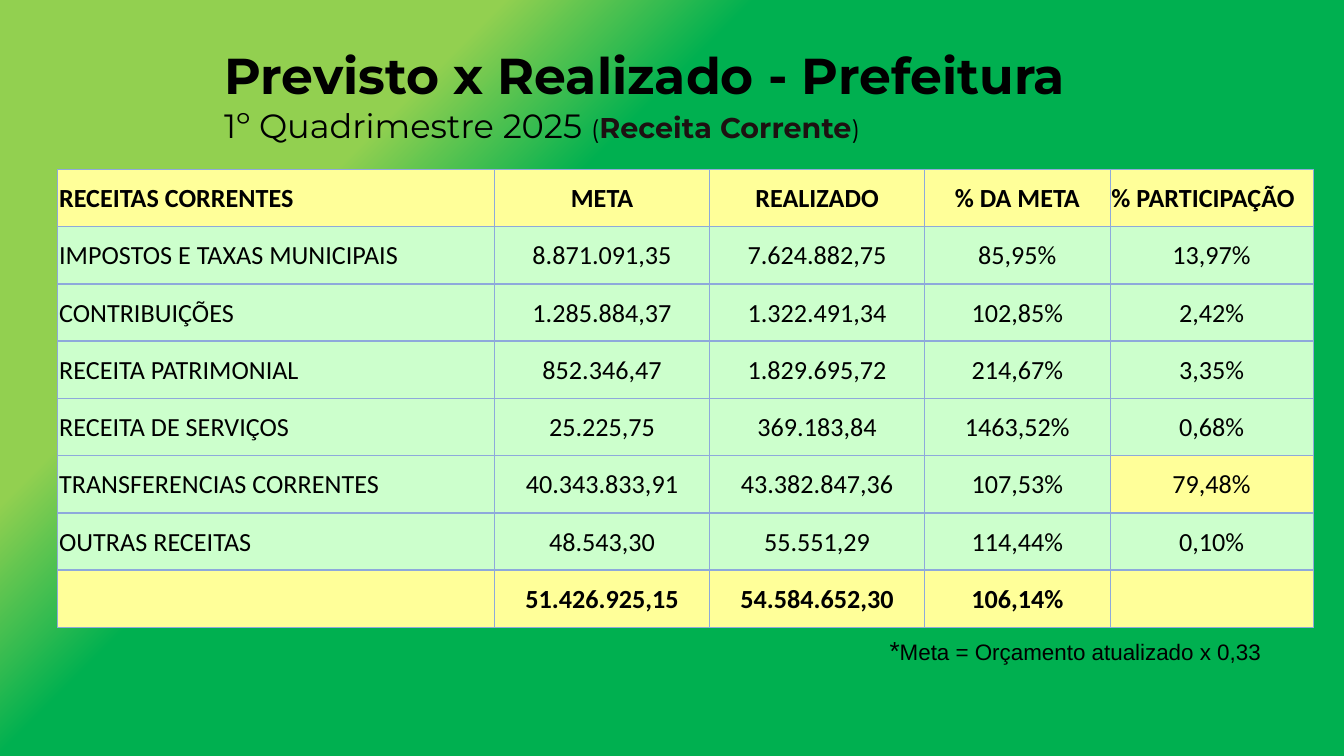
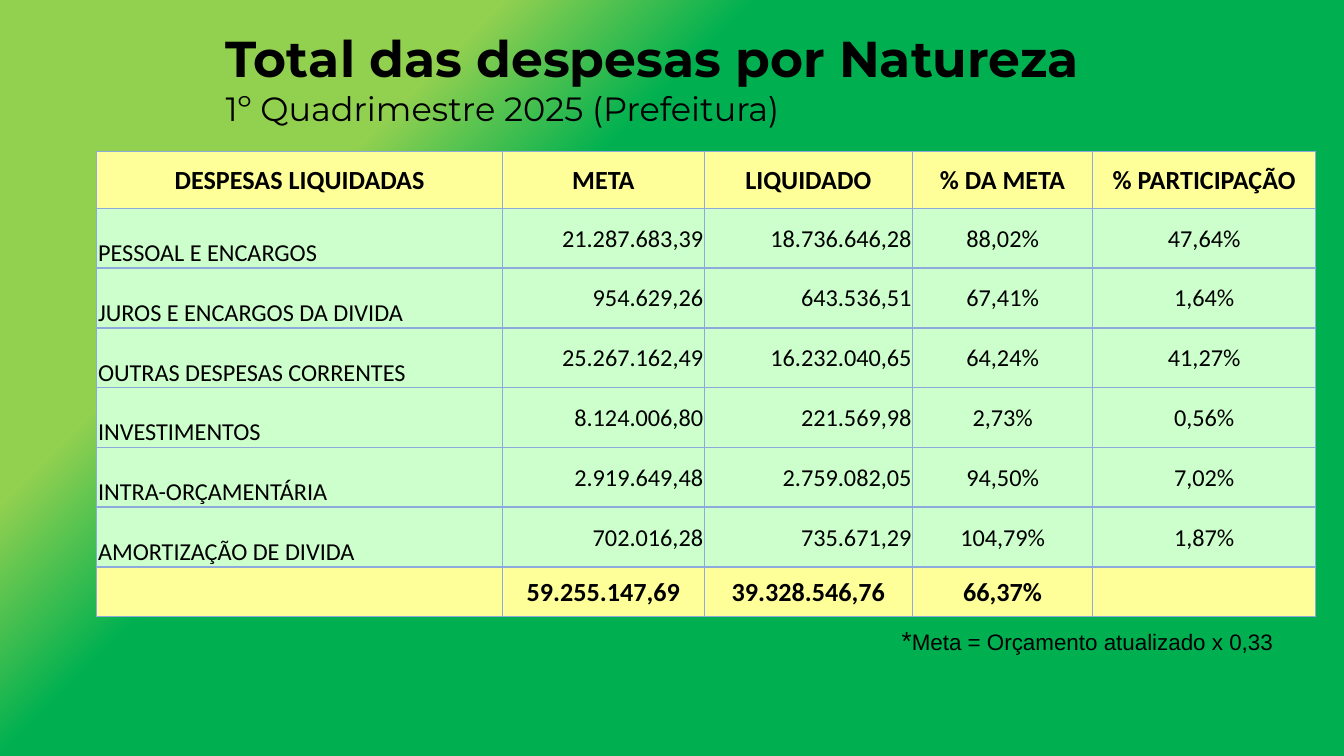
import pptx
import pptx.dml.color
import pptx.enum.text
import pptx.oxml.ns
import pptx.util
from lxml import etree

Inches, Pt = pptx.util.Inches, pptx.util.Pt
qn = pptx.oxml.ns.qn
ANCHOR = pptx.enum.text.MSO_ANCHOR
LEFT, CENTER, RIGHT = (pptx.enum.text.PP_ALIGN.LEFT, pptx.enum.text.PP_ALIGN.CENTER,
                       pptx.enum.text.PP_ALIGN.RIGHT)

# Shared style
BLACK, BROWN = "000000", "1D1111"
YELLOW, MINT, RULE = "FFFF99", "CCFFCC", "8EA9DB"
BACKGROUND = [(0, "92D050"), (24, "92D050"), (36, "00B050"), (100, "00B050")]
TITLE_FONT, TABLE_FONT, NOTE_FONT = "Montserrat", "Calibri", "Arial"
THIN, THICK = 0.5, 1

# Runs are (text, size, bold, colour); a text ending in a newline breaks the line
NOTE = [("*", 14, False, BLACK), ("Meta = Orçamento atualizado x 0,33", 12, False, BLACK)]

SLIDES = [
    {
        "heading": [[("Previsto x Realizado - Prefeitura\n", 27, True, BLACK),
                     ("1º Quadrimestre 2025 ", 18, False, BLACK), ("(", 13.5, False, BLACK),
                     ("Receita Corrente", 15.3, True, BROWN), (")", 13.5, False, BLACK)]],
        "heading_at": (1.57, 0.21, 7.78, 0.92),
        "note_at": (6.52, 4.67, 3.05, 0.34),
        "table_at": (0.43, 1.26, 9.35, 3.41),
        "columns": [3.25, 1.6, 1.6, 1.38, 1.51],
        "header_height": 3.41 / 8, "total_height": 3.41 / 8,
        "header_align": [LEFT, CENTER, CENTER, CENTER, LEFT],
        "body_align": [LEFT, CENTER, CENTER, CENTER, CENTER],
        "body_size": 14, "label_anchor": ANCHOR.MIDDLE, "header_rule": THICK,
        "highlight": (5, 4),
        "rows": [
            ("RECEITAS CORRENTES", "META", "REALIZADO", "% DA META", "% PARTICIPAÇÃO"),
            ("IMPOSTOS E TAXAS MUNICIPAIS", "8.871.091,35", "7.624.882,75", "85,95%", "13,97%"),
            ("CONTRIBUIÇÕES", "1.285.884,37", "1.322.491,34", "102,85%", "2,42%"),
            ("RECEITA PATRIMONIAL", "852.346,47", "1.829.695,72", "214,67%", "3,35%"),
            ("RECEITA DE SERVIÇOS", "25.225,75", "369.183,84", "1463,52%", "0,68%"),
            ("TRANSFERENCIAS CORRENTES", "40.343.833,91", "43.382.847,36", "107,53%", "79,48%"),
            ("OUTRAS RECEITAS", "48.543,30", "55.551,29", "114,44%", "0,10%"),
            ("", "51.426.925,15", "54.584.652,30", "106,14%", ""),
        ],
    },
    {
        "heading": [[("Total das despesas por Natureza", 27, True, BLACK)],
                    [("1º Quadrimestre 2025 (Prefeitura)", 18, False, BLACK)]],
        "heading_at": (1.58, 0.19, 8.08, 0.81),
        "note_at": (6.61, 4.6, 3.05, 0.34),
        "table_at": (0.72, 1.13, 9.07, 3.46),
        "columns": [3.02, 1.5, 1.55, 1.34, 1.66],
        "header_height": 0.42, "total_height": 0.37,
        "header_align": [CENTER] * 5,
        "body_align": [LEFT, RIGHT, RIGHT, CENTER, CENTER],
        "body_size": 13, "label_anchor": ANCHOR.BOTTOM, "header_rule": THIN,
        "highlight": None,
        "rows": [
            ("DESPESAS LIQUIDADAS", "META", "LIQUIDADO", "% DA META", "% PARTICIPAÇÃO"),
            ("PESSOAL E ENCARGOS", "21.287.683,39", "18.736.646,28", "88,02%", "47,64%"),
            ("JUROS E ENCARGOS DA DIVIDA", "954.629,26", "643.536,51", "67,41%", "1,64%"),
            ("OUTRAS DESPESAS CORRENTES", "25.267.162,49", "16.232.040,65", "64,24%", "41,27%"),
            ("INVESTIMENTOS", "8.124.006,80", "221.569,98", "2,73%", "0,56%"),
            ("INTRA-ORÇAMENTÁRIA", "2.919.649,48", "2.759.082,05", "94,50%", "7,02%"),
            ("AMORTIZAÇÃO DE DIVIDA", "702.016,28", "735.671,29", "104,79%", "1,87%"),
            ("", "59.255.147,69", "39.328.546,76", "66,37%", ""),
        ],
    },
]


def color(value):
    return pptx.dml.color.RGBColor.from_string(value)


def set_font(font, name, size, bold, value):
    font.name, font.size, font.bold = name, Pt(size), bold
    font.color.rgb = color(value)


def paint_background(page):
    fill = page.background.fill
    fill.gradient()
    fill.gradient_angle = 315
    stops = page.element.find(".//" + qn("a:gsLst"))
    for stop in list(stops):
        stops.remove(stop)
    for position, value in BACKGROUND:
        stop = etree.SubElement(stops, qn("a:gs"), pos=str(position * 1000))
        etree.SubElement(stop, qn("a:srgbClr"), val=value)


def add_text(page, at, lines, font_name, anchor=ANCHOR.TOP):
    frame = page.shapes.add_textbox(*map(Inches, at)).text_frame
    frame.word_wrap = True
    frame.vertical_anchor = anchor
    for index, spans in enumerate(lines):
        para = frame.add_paragraph() if index else frame.paragraphs[0]
        for text, size, bold, value in spans:
            span = para.add_run()
            span.text = text.rstrip("\n")
            set_font(span.font, font_name, size, bold, value)
            if text.endswith("\n"):
                para.add_line_break()


def set_borders(cell, top, bottom):
    properties = cell._tc.get_or_add_tcPr()
    for side, width in (("L", THIN), ("R", THIN), ("T", top), ("B", bottom)):
        line = etree.SubElement(properties, qn("a:ln" + side), w=str(Pt(width)))
        fill = etree.SubElement(line, qn("a:solidFill"))
        etree.SubElement(fill, qn("a:srgbClr"), val=RULE)


def add_budget_table(page, data):
    rows, widths = data["rows"], data["columns"]
    last = len(rows) - 1
    table = page.shapes.add_table(len(rows), len(widths), *map(Inches, data["table_at"])).table
    for column, width in zip(table.columns, widths):
        column.width = Inches(width)

    # Body rows share what the header and total leave
    header, total = data["header_height"], data["total_height"]
    body = (data["table_at"][3] - header - total) / (last - 1)
    for row, height in zip(table.rows, [header] + [body] * (last - 1) + [total]):
        row.height = Inches(height)

    # Horizontal rules, from the top edge to the bottom edge
    rules = [THIN, data["header_rule"]] + [THICK] * last

    for r, values in enumerate(rows):
        strong = r in (0, last)
        aligns = data["header_align"] if r == 0 else data["body_align"]
        for c, text in enumerate(values):
            cell = table.cell(r, c)
            set_borders(cell, rules[r], rules[r + 1])
            cell.fill.solid()
            cell.fill.fore_color.rgb = color(
                YELLOW if strong or (r, c) == data["highlight"] else MINT)
            cell.margin_left = cell.margin_right = cell.margin_top = Inches(0.01)
            cell.margin_bottom = 0
            is_label = c == 0 and not strong
            cell.vertical_anchor = data["label_anchor"] if is_label else ANCHOR.MIDDLE
            cell.text = text
            para = cell.text_frame.paragraphs[0]
            para.alignment = CENTER if r == last else aligns[c]
            set_font(para.font, TABLE_FONT, 14 if strong else data["body_size"], strong, BLACK)


def main():
    deck = pptx.Presentation()
    # Widescreen, 16:9
    deck.slide_width = Inches(10)
    deck.slide_height = deck.slide_width * 9 // 16
    for data in SLIDES:
        page = deck.slides.add_slide(deck.slide_layouts[6])
        paint_background(page)
        add_text(page, data["heading_at"], data["heading"], TITLE_FONT, ANCHOR.BOTTOM)
        add_budget_table(page, data)
        add_text(page, data["note_at"], [NOTE], NOTE_FONT)
    deck.save("out.pptx")


if __name__ == "__main__":
    main()
